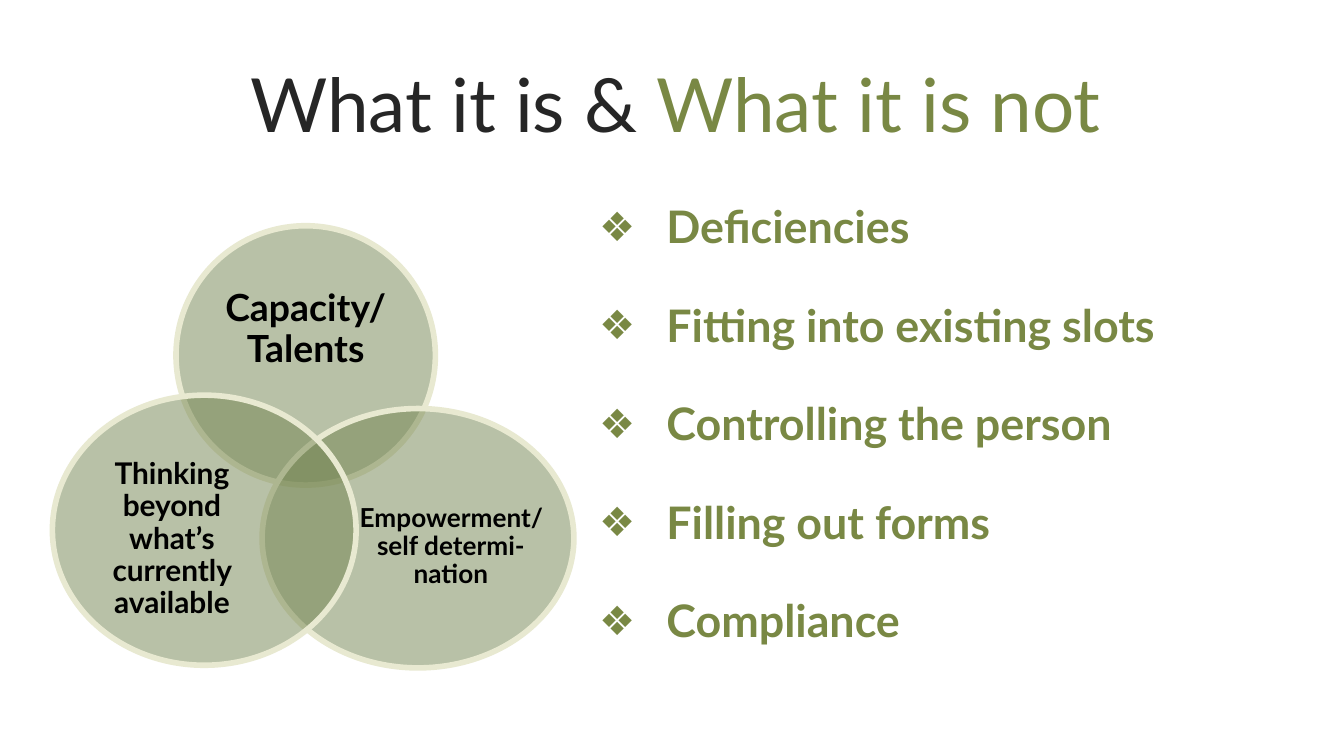
from lxml.etree import SubElement
from pptx import Presentation
from pptx.dml.color import RGBColor
from pptx.enum.shapes import MSO_SHAPE
from pptx.enum.text import MSO_ANCHOR, PP_ALIGN
from pptx.oxml.ns import qn
from pptx.util import Inches, Pt

THEME = {
    "font": "Lato",
    "dark": RGBColor.from_string("262626"),
    "accent": RGBColor.from_string("798844"),
    "circle": RGBColor.from_string("738450"),
    "rim": RGBColor.from_string("E8E9D1"),
    "label": RGBColor.from_string("000000"),
    "title_size": 40,
    "list_size": 24,
    "opacity": 50,
}

TITLE = [("What it is & ", "dark"), ("What it is not", "accent")]
WHAT_IT_IS_NOT = [
    "Deficiencies",
    "Fitting into existing slots",
    "Controlling the person",
    "Filling out forms",
    "Compliance",
]
WHAT_IT_IS = [
    ("Capacity/Talents", 20, (1.31, 1.68, 1.93, 1.93), (1.57, 2.02, 1.41, 0.87)),
    ("Empowerment/self determi-nation", 14, (1.95, 3.04, 2.32, 1.93), (2.66, 3.54, 1.39, 1.06)),
    ("Thinking beyond what’s currently available", 16, (0.39, 2.94, 2.26, 2.01), (0.6, 3.46, 1.36, 1.11)),
]


def style(font, size, color, bold=False):
    font.name = THEME["font"]
    font.size = Pt(size)
    font.bold = bold
    font.color.rgb = color


def add_text_frame(slide, area, anchor):
    frame = slide.shapes.add_textbox(*map(Inches, area)).text_frame
    frame.word_wrap = True
    frame.vertical_anchor = anchor
    return frame


def add_title(slide):
    heading = add_text_frame(slide, (0.43, 0.24, 9.19, 1.04), MSO_ANCHOR.MIDDLE).paragraphs[0]
    heading.alignment = PP_ALIGN.CENTER
    for words, color in TITLE:
        part = heading.add_run()
        part.text = words
        style(part.font, THEME["title_size"], THEME[color])


def add_bullet(paragraph):
    properties = paragraph._p.get_or_add_pPr()
    properties.set("marL", str(Inches(0.5)))
    properties.set("indent", str(-Inches(0.5)))
    SubElement(properties, qn("a:buSzPct"), val="90000")
    SubElement(properties, qn("a:buFont"), typeface=THEME["font"])
    SubElement(properties, qn("a:buChar"), char="❖")


def add_list(slide):
    frame = add_text_frame(slide, (4.36, 1.43, 5.28, 3.83), MSO_ANCHOR.TOP)
    for index, words in enumerate(WHAT_IT_IS_NOT):
        item = frame.add_paragraph() if index else frame.paragraphs[0]
        item.text = words
        add_bullet(item)
        if index:
            item.space_before = Pt(24)
        style(item.font, THEME["list_size"], THEME["accent"], True)


def add_circle(slide, words, size, circle_area, label_area):
    circle = slide.shapes.add_shape(MSO_SHAPE.OVAL, *map(Inches, circle_area))
    circle.shadow.inherit = False
    circle.fill.solid()
    circle.fill.fore_color.rgb = THEME["circle"]
    tint = circle._element.spPr.find(qn("a:solidFill")).find(qn("a:srgbClr"))
    SubElement(tint, qn("a:alpha"), val=str(THEME["opacity"] * 1000))
    circle.line.color.rgb = THEME["rim"]
    circle.line.width = Pt(3)

    frame = add_text_frame(slide, label_area, MSO_ANCHOR.MIDDLE)
    frame.margin_left = frame.margin_right = frame.margin_top = frame.margin_bottom = 0
    label = frame.paragraphs[0]
    label.text = words
    label.alignment = PP_ALIGN.CENTER
    label.line_spacing = 0.9
    style(label.font, size, THEME["label"], True)


def main():
    deck = Presentation()
    deck.slide_width, deck.slide_height = Inches(10), Inches(10 * 9 / 16)
    slide = deck.slides.add_slide(deck.slide_layouts[6])
    add_title(slide)
    add_list(slide)
    for venn_part in WHAT_IT_IS:
        add_circle(slide, *venn_part)
    deck.save("out.pptx")


if __name__ == "__main__":
    main()
